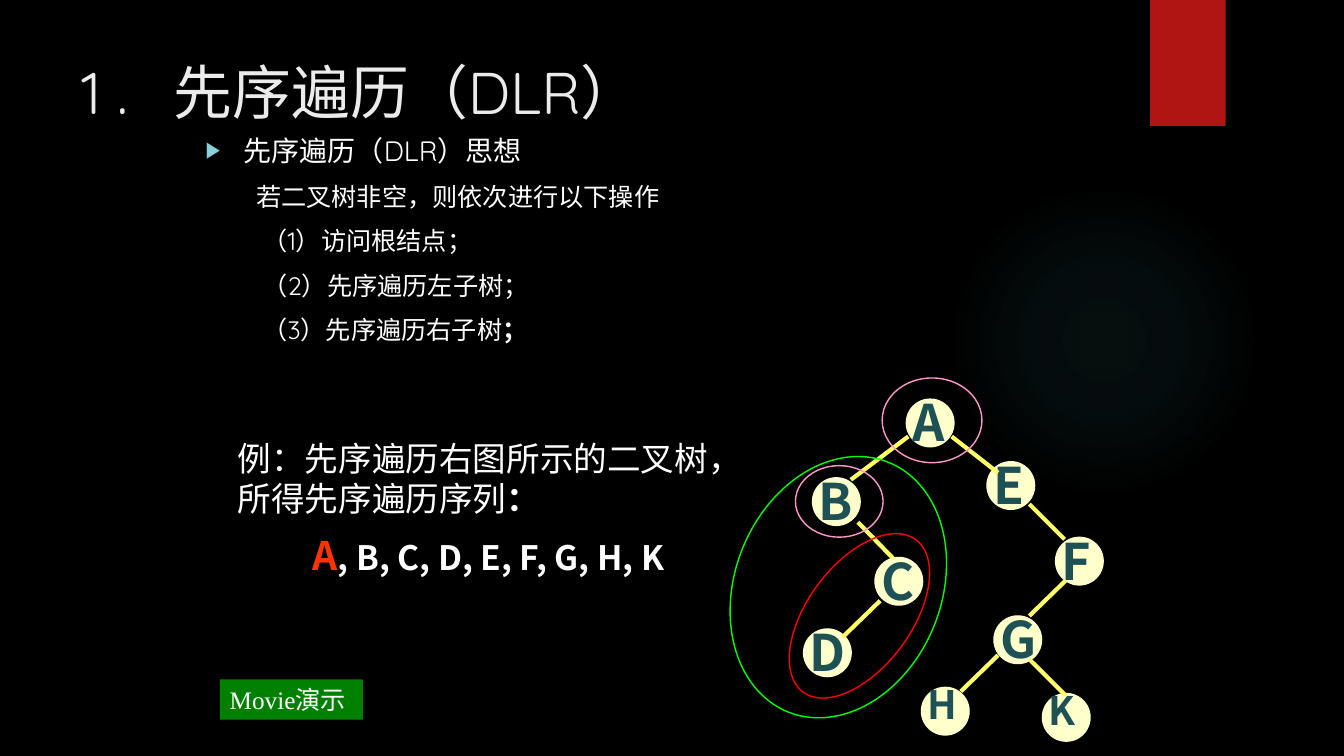
import pptx
import pptx.util
import pptx.dml.color
import pptx.enum.shapes
import pptx.enum.text
import pptx.oxml
import pptx.oxml.ns

Pt = pptx.util.Pt
RGB = pptx.dml.color.RGBColor
KIND = pptx.enum.shapes.MSO_SHAPE
ANCHOR = pptx.enum.text.MSO_ANCHOR
ALIGN = pptx.enum.text.PP_ALIGN
FIT = pptx.enum.text.MSO_AUTO_SIZE

BLACK = RGB(0x00, 0x00, 0x00)
WHITE = RGB(0xFF, 0xFF, 0xFF)
PALE = RGB(0xEB, 0xEB, 0xEB)
BRICK = RGB(0xB0, 0x15, 0x13)
CREAM = RGB(0xFF, 0xFF, 0xCC)
TEAL = RGB(0x1E, 0x51, 0x55)
YELLOW = RGB(0xFF, 0xFF, 0x66)
LIME = RGB(0x00, 0xFF, 0x00)
PINK = RGB(0xFF, 0x99, 0xCC)
RED = RGB(0xFF, 0x00, 0x00)
ORANGE = RGB(0xFF, 0x33, 0x00)
GREEN = RGB(0x00, 0x80, 0x00)
AQUA = RGB(0x8A, 0xD0, 0xD6)
GLOW = RGB(0x50, 0xB9, 0xC1)

SANS = "Noto Sans CJK SC"
THIN = "Quicksand"
SERIF = "Times New Roman"


def xml(tag, attrs="", inner=""):
    space = pptx.oxml.ns.nsdecls("a")
    return pptx.oxml.parse_xml(f"<a:{tag} {space} {attrs}>{inner}</a:{tag}>")


def style(item, face, size, color, bold=False):
    font = item.font
    font.name, font.size, font.bold = face, Pt(size), bold
    font.color.rgb = color


def place(shape, box):
    shape.left, shape.top, shape.width, shape.height = map(Pt, box)


def shape(slide, kind, box, fill=None, line=None):
    form = slide.shapes.add_shape(kind, *map(Pt, box))
    form.shadow.inherit = False
    if fill is None:
        form.fill.background()
    else:
        form.fill.solid()
        form.fill.fore_color.rgb = fill
    if line is None:
        form.line.fill.background()
    else:
        form.line.color.rgb = line
        form.line.width = Pt(1)
    return form


def frame(form):
    text = form.text_frame
    text.word_wrap = True
    text.auto_size = FIT.NONE
    text.vertical_anchor = ANCHOR.TOP
    return text


def decor(slide, halo, flag):
    # Soft glow
    disc = shape(slide, KIND.OVAL, halo, GLOW)
    stops = "".join(
        f'<a:gs pos="{pos}000"><a:srgbClr val="{GLOW}">'
        f'<a:alpha val="{alpha}000"/></a:srgbClr></a:gs>'
        for pos, alpha in ((0, 7), (36, 6), (69, 0)))
    grad = xml("gradFill", 'rotWithShape="1"',
               f'<a:gsLst>{stops}</a:gsLst><a:path path="circle">'
               '<a:fillToRect l="50000" t="50000" r="50000" b="50000"/></a:path>')
    props = disc.element.spPr
    props.replace(props.find(pptx.oxml.ns.qn("a:solidFill")), grad)
    # Red tab at the top edge
    shape(slide, KIND.RECTANGLE, flag, BRICK)


def title(slide, box):
    head = slide.shapes.title
    place(head, box)
    line = frame(head).paragraphs[0]
    line.text = "1 .\t先序遍历（DLR）"
    line.alignment = ALIGN.LEFT
    line._p.get_or_add_pPr().append(
        xml("tabLst", inner=f'<a:tab pos="{Pt(66)}" algn="l"/>'))
    style(line, THIN, 42, PALE)


def body(slide, box):
    holder = slide.placeholders[1]
    place(holder, box)
    text = frame(holder)
    # Text, left margin, first indent, size, line height
    rows = [("先序遍历（DLR）思想", 27, -27, 20, 24),
            ("若二叉树非空，则依次进行以下操作", 36, 0, 18, 21.8),
            ("（1）访问根结点；", 40.5, 0, 18, 21.8),
            ("（2）先序遍历左子树；", 40.5, 0, 18, 21.8),
            ("（3）先序遍历右子树", 40.5, 0, 18, 21.8)]
    for i, (words, left, first, size, pitch) in enumerate(rows):
        line = text.add_paragraph() if i else text.paragraphs[0]
        line.level = min(i, 1)
        line.add_run().text = words
        props = line._p.get_or_add_pPr()
        props.set("marL", str(Pt(left)))
        props.set("indent", str(Pt(first)))
        if i:
            props.append(xml("buNone"))
        else:
            props.append(xml("buClr", inner=f'<a:srgbClr val="{AQUA}"/>'))
            props.append(xml("buSzPct", 'val="80000"'))
            props.append(xml("buChar", 'char="▶"'))
        line.space_before = Pt(10 if i else 0)
        line.line_spacing = Pt(pitch)
        style(line, THIN, size, WHITE)
    end = line.add_run()
    end.text = "；"
    end.font.bold = True


def sample(slide, box):
    text = frame(slide.shapes.add_textbox(*map(Pt, box)))
    # Task
    line = text.paragraphs[0]
    line.line_spacing = Pt(28.6)
    style(line, SANS, 24, WHITE)
    line.add_run().text = "例：先序遍历右图所示的二叉树，所得先序遍历序列"
    colon = line.add_run()
    colon.text = "："
    colon.font.bold = True
    # Result
    line = text.add_paragraph()
    line._p.get_or_add_pPr().set("marL", str(Pt(53.5)))
    line.space_before = Pt(5)
    line.line_spacing = Pt(37.6)
    for words, size, color in (("A", 28, ORANGE),
                               (", B, C, D, E, F, G, H, K", 24, WHITE)):
        run = line.add_run()
        run.text = words
        style(run, SANS, size, color, True)


def node(slide, name, x, y):
    shape(slide, KIND.OVAL, (x, y, 34, 34), CREAM, CREAM)
    text = frame(slide.shapes.add_textbox(Pt(x + 4.5), Pt(y - 5.4), Pt(46), Pt(46)))
    text.margin_left = text.margin_right = 0
    text.margin_top = text.margin_bottom = 0
    line = text.paragraphs[0]
    line.text = name
    style(line, SANS, 28 if name in "HK" else 36, TEAL, True)


def tree(slide, box):
    left, top = box[:2]
    # Nodes
    nodes = {"A": (122.4, 15.1), "B": (55.4, 71.3), "C": (100, 128.2),
             "D": (49, 179.3), "E": (180, 59.8), "F": (229, 113.8),
             "G": (185, 170), "H": (133.2, 221), "K": (219.6, 225.4)}
    for name, (x, y) in nodes.items():
        node(slide, name, left + x, top + y)
    # Branches
    edges = [(123.8, 41.8, 82.8, 72.7), (154.8, 41.8, 187.9, 67.7),
             (87.8, 103, 113, 128.9), (103.7, 159.1, 77, 185),
             (210.2, 90, 235.4, 115.2), (236.2, 144.7, 210.2, 170),
             (187.9, 198, 161.3, 223.9), (210.2, 200.9, 236.2, 226.8)]
    for x, y, far, low in edges:
        edge = slide.shapes.add_connector(
            pptx.enum.shapes.MSO_CONNECTOR.STRAIGHT,
            Pt(left + x), Pt(top + y), Pt(left + far), Pt(top + low))
        edge.line.color.rgb = YELLOW
        edge.line.width = Pt(3)
        edge.element.spPr.append(xml("effectLst"))
    # Rings around subtrees and roots
    rings = [(0, 53.3, 147.6, 192.2, 21.9, LIME),
             (105.1, 0, 71.3, 60.5, 0, PINK),
             (43.2, 62.6, 62.6, 51.1, 0, PINK),
             (51.8, 102.2, 74.2, 135.4, 36.5, RED)]
    for x, y, wide, high, turn, color in rings:
        ring = shape(slide, KIND.OVAL, (left + x, top + y, wide, high), line=color)
        ring.rotation = turn


def button(slide, box):
    text = frame(shape(slide, KIND.RECTANGLE, box, GREEN))
    text.vertical_anchor = ANCHOR.MIDDLE
    line = text.paragraphs[0]
    line.text = "Movie演示"
    line.alignment = ALIGN.LEFT
    style(line, SERIF, 18, WHITE)


def main():
    deck = pptx.Presentation()
    deck.slide_width, deck.slide_height = Pt(960), Pt(540)
    slide = deck.slides.add_slide(deck.slide_layouts[1])
    slide.background.fill.solid()
    slide.background.fill.fore_color.rgb = BLACK
    decor(slide, (677.5, 131.8, 221.8, 221.8), (821.5, 0, 54, 90))
    title(slide, (51, 36, 741, 110))
    body(slide, (139.7, 91.4, 648, 212.4))
    sample(slide, (162.7, 309.6, 388, 141))
    tree(slide, (525, 270, 264, 260))
    button(slide, (157, 485.3, 102.2, 28.8))
    deck.save("out.pptx")


if __name__ == "__main__":
    main()
